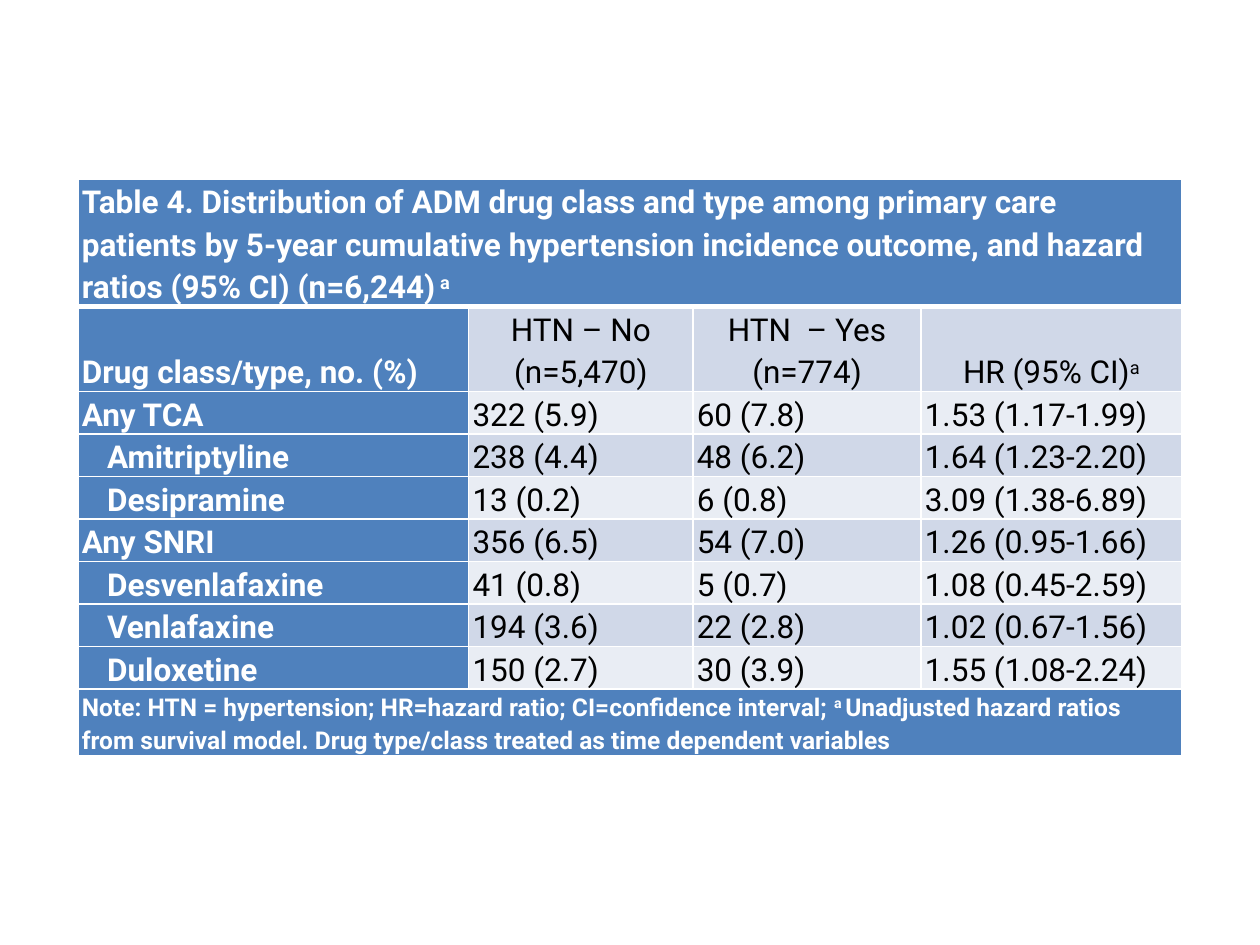
from lxml.etree import SubElement
from pptx import Presentation
from pptx.dml.color import RGBColor
from pptx.enum.text import MSO_ANCHOR, PP_ALIGN
from pptx.oxml.ns import qn
from pptx.util import Inches, Pt

COLORS = {"blue": "4F81BD", "band": "D0D8E8", "light": "E9EDF4", "white": "FFFFFF", "black": "000000"}
TITLE = ("Table 4. Distribution of ADM drug class and type among primary care patients by "
         "5-year cumulative hypertension incidence outcome, and hazard ratios (95% CI) (n=6,244)^ a")
NOTE = ("Note: HTN = hypertension; HR=hazard ratio; CI=confidence interval; ^a ^Unadjusted hazard "
        "ratios from survival model. Drug type/class treated as time dependent variables")
ROWS = [
    [TITLE],
    ["Drug class/type, no. (%)", "HTN – No\n(n=5,470)", "HTN  – Yes\n(n=774)", "HR (95% CI)^a"],
    ["Any TCA", "322 (5.9)", "60 (7.8)", "1.53 (1.17-1.99)"],
    ["Amitriptyline", "238 (4.4)", "48 (6.2)", "1.64 (1.23-2.20)"],
    ["Desipramine", "13 (0.2)", "6 (0.8)", "3.09 (1.38-6.89)"],
    ["Any SNRI", "356 (6.5)", "54 (7.0)", "1.26 (0.95-1.66)"],
    ["Desvenlafaxine", "41 (0.8)", "5 (0.7)", "1.08 (0.45-2.59)"],
    ["Venlafaxine", "194 (3.6)", "22 (2.8)", "1.02 (0.67-1.56)"],
    ["Duloxetine", "150 (2.7)", "30 (3.9)", "1.55 (1.08-2.24)"],
    [NOTE],
]
WIDTHS = [3.1, 1.78, 1.81, 2.07]
HEIGHTS = [1.01, 0.67] + [0.33] * 7 + [0.52]
HEADER, LAST = 1, len(ROWS) - 1


def add_borders(cell, bottom_width):
    for side in "LRTB":
        width = Pt(bottom_width if side == "B" else 1)
        line = SubElement(cell._tc.get_or_add_tcPr(), qn(f"a:ln{side}"), w=str(width))
        SubElement(SubElement(line, qn("a:solidFill")), qn("a:srgbClr"), val=COLORS["white"])


def write_paragraph(para, text, size, color, bold):
    para.line_spacing = 1.15
    for part, words in enumerate(text.split("^")):
        span = para.add_run()
        span.text = words
        span.font.name = "Roboto"
        span.font.size = Pt(size)
        span.font.bold = bold
        span.font.color.rgb = RGBColor.from_string(COLORS[color])
        if part % 2:
            span._r.get_or_add_rPr().set("baseline", "30000")


deck = Presentation()
deck.slide_width, deck.slide_height = Inches(10), Inches(7.5)
page = deck.slides.add_slide(deck.slide_layouts[6])
frame = page.shapes.add_table(len(ROWS), len(WIDTHS), Inches(0.62), Inches(1.42),
                              Inches(sum(WIDTHS)), Inches(sum(HEIGHTS)))
table = frame.table
for column, width in zip(table.columns, WIDTHS):
    column.width = Inches(width)
for row, height in zip(table.rows, HEIGHTS):
    row.height = Inches(height)
for index in (0, LAST):
    table.cell(index, 0).merge(table.cell(index, len(WIDTHS) - 1))

for r, texts in enumerate(ROWS):
    for c in range(len(WIDTHS)):
        cell = table.cell(r, c)
        is_label = c == 0 or len(texts) == 1
        add_borders(cell, 3 if r == 0 else 1)
        cell.fill.solid()
        fill = "blue" if is_label else "band" if r % 2 else "light"
        cell.fill.fore_color.rgb = RGBColor.from_string(COLORS[fill])
        cell.margin_left = cell.margin_right = Inches(0.03)
        cell.margin_top = cell.margin_bottom = 0
        if c >= len(texts):
            continue
        if r == HEADER:
            cell.vertical_anchor = MSO_ANCHOR.BOTTOM
        for number, text in enumerate(texts[c].split("\n")):
            para = cell.text_frame.add_paragraph() if number else cell.text_frame.paragraphs[0]
            if r == HEADER and not is_label:
                para.alignment = PP_ALIGN.CENTER
            if HEADER < r < LAST and c == 0 and not text.startswith("Any"):
                para._p.get_or_add_pPr().set("marL", str(Inches(0.2)))
            write_paragraph(para, text, 14 if r == LAST else 18,
                            "white" if is_label else "black", is_label)

deck.save("out.pptx")
